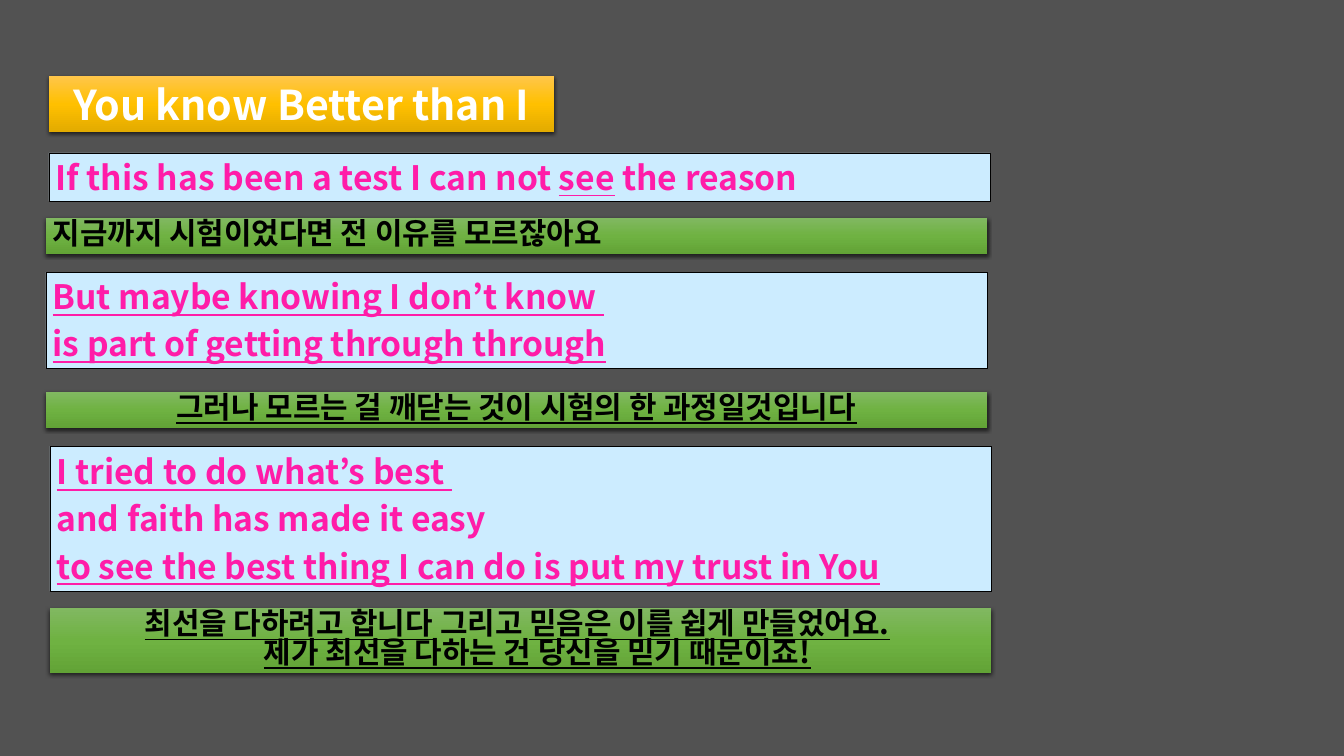
import copy
from dataclasses import dataclass

import pptx
import pptx.dml.color
import pptx.enum.shapes
import pptx.enum.text
import pptx.oxml
import pptx.oxml.ns
import pptx.util

PX = pptx.util.Inches(1) / 67.2
ALIGN = pptx.enum.text.PP_ALIGN
ANCHOR = pptx.enum.text.MSO_ANCHOR
WIDTH = 941  # shared by all lyric and translation bars


@dataclass(frozen=True)
class Theme:
    font: str = "Noto Sans CJK KR"
    background: str = "525252"
    title_text: str = "FFFFFF"
    title_fill: tuple = ("FFC64B", "FFC000", "E3AB00")
    lyric_text: str = "FF1CA8"
    lyric_fill: str = "CCECFF"
    outline: str = "000000"
    translation_text: str = "000000"
    translation_fill: tuple = ("81B861", "6FB242", "62A336")
    title_size: int = 44
    lyric_size: int = 36
    translation_size: int = 32


THEME = Theme()

# Each lyric paragraph is a list of (text, underlined) runs
LYRICS = [
    ((49, 153, 48), [
        [("If this has been a test I can not ", False), ("see", True),
         (" the reason", False)],
    ]),
    ((46, 272, 96), [
        [("But maybe knowing I don’t know ", True)],
        [("is part of getting through through", True)],
    ]),
    ((50, 446, 145), [
        [("I tried to do what’s best ", True)],
        [("and faith has made it easy", False)],
        [("to see the best thing I can do is put my trust in You", True)],
    ]),
]

TRANSLATIONS = [
    ((46, 218, 36), ALIGN.LEFT,
     [("지금까지 시험이었다면 전 이유를 모르잖아요", False)]),
    ((46, 392, 36), ALIGN.CENTER,
     [("그러나 모르는 걸 깨닫는 것이 시험의 한 과정일것입니다", True)]),
    ((50, 608, 65), ALIGN.CENTER,
     [("최선을 다하려고 합니다", True), (" 그리고 ", False),
      ("믿음은 이를 쉽게 만들었어요.", True), (" ", False), ("\n", False),
      ("제가 최선을 다하는 건 당신을 믿기 때문이죠!", True)]),
]


def px(value):
    return pptx.util.Emu(round(value * PX))


def rgb(value):
    return pptx.dml.color.RGBColor.from_string(value)


def apply(target, formats):
    for name, value in formats.items():
        setattr(target, name, value)


def fill_gradient(shape, colors):
    """Fill from top to bottom with evenly spaced stops."""
    shape.fill.gradient()
    shape.fill.gradient_angle = 270
    stop_list = shape.fill._fill._gradFill.find(pptx.oxml.ns.qn("a:gsLst"))
    stop_list.append(copy.deepcopy(stop_list[-1]))
    for index, (stop, color) in enumerate(zip(shape.fill.gradient_stops, colors)):
        stop.color.rgb = rgb(color)
        stop.position = index / (len(colors) - 1)


def add_shadow(shape):
    shape.shadow.inherit = False
    effects = shape._element.spPr.find(pptx.oxml.ns.qn("a:effectLst"))
    effects.append(pptx.oxml.parse_xml(
        f'<a:outerShdw {pptx.oxml.ns.nsdecls("a")} blurRad="57150" dist="19050" '
        'dir="5400000" algn="ctr" rotWithShape="0">'
        '<a:srgbClr val="000000"><a:alpha val="63000"/></a:srgbClr></a:outerShdw>'))


def style_gradient_bar(shape, colors):
    fill_gradient(shape, colors)
    shape.line.fill.background()
    add_shadow(shape)


def format_frame(frame, anchor):
    apply(frame, {
        "word_wrap": True,
        "vertical_anchor": anchor,
        "auto_size": pptx.enum.text.MSO_AUTO_SIZE.SHAPE_TO_FIT_TEXT,
    })


def write_runs(paragraph, runs, size, color):
    for text, underlined in runs:
        if text == "\n":
            paragraph.add_line_break()
            continue
        run = paragraph.add_run()
        run.text = text
        apply(run.font, {"name": THEME.font, "size": pptx.util.Pt(size),
                         "bold": True, "underline": underlined})
        run.font.color.rgb = rgb(color)
        # Korean text takes the East Asian typeface
        latin = run.font._element.find(pptx.oxml.ns.qn("a:latin"))
        latin.addnext(pptx.oxml.parse_xml(
            f'<a:ea {pptx.oxml.ns.nsdecls("a")} typeface="{THEME.font}"/>'))


def add_bar(slide, place):
    left, top, height = place
    bar = slide.shapes.add_shape(pptx.enum.shapes.MSO_SHAPE.RECTANGLE,
                                 px(left), px(top), px(WIDTH), px(height))
    bar.shadow.inherit = False
    format_frame(bar.text_frame, ANCHOR.MIDDLE)
    return bar


def add_lyric(slide, place, lines):
    bar = add_bar(slide, place)
    bar.fill.solid()
    bar.fill.fore_color.rgb = rgb(THEME.lyric_fill)
    bar.line.color.rgb = rgb(THEME.outline)
    bar.line.width = pptx.util.Pt(0.75)
    frame = bar.text_frame
    for index, runs in enumerate(lines):
        paragraph = frame.add_paragraph() if index else frame.paragraphs[0]
        apply(paragraph, {"alignment": ALIGN.LEFT,
                          "space_before": pptx.util.Pt(0.2 * THEME.lyric_size)})
        write_runs(paragraph, runs, THEME.lyric_size, THEME.lyric_text)


def add_translation(slide, place, alignment, runs):
    bar = add_bar(slide, place)
    style_gradient_bar(bar, THEME.translation_fill)
    paragraph = bar.text_frame.paragraphs[0]
    apply(paragraph, {"alignment": alignment, "line_spacing": 0.8,
                      "space_before": pptx.util.Pt(0.5 * THEME.translation_size)})
    # Hanging indent
    indent = pptx.util.Inches(0.5)
    properties = paragraph._p.get_or_add_pPr()
    properties.set("marL", str(indent))
    properties.set("indent", str(-indent))
    write_runs(paragraph, runs, THEME.translation_size, THEME.translation_text)


def add_title(slide, text):
    title = slide.shapes.title
    apply(title, {"left": px(49), "top": px(76), "width": px(505), "height": px(56)})
    style_gradient_bar(title, THEME.title_fill)
    format_frame(title.text_frame, ANCHOR.TOP)
    paragraph = title.text_frame.paragraphs[0]
    apply(paragraph, {"alignment": ALIGN.CENTER, "line_spacing": 1.0})
    write_runs(paragraph, [(text, False)], THEME.title_size, THEME.title_text)


def main():
    deck = pptx.Presentation()
    apply(deck, {"slide_width": px(1344), "slide_height": px(756)})
    slide = deck.slides.add_slide(deck.slide_layouts.get_by_name("Title Only"))

    # Background
    slide.background.fill.solid()
    slide.background.fill.fore_color.rgb = rgb(THEME.background)

    # Song title, then each lyric with its translation
    add_title(slide, "You know Better than I")
    for lyric, translation in zip(LYRICS, TRANSLATIONS):
        add_lyric(slide, *lyric)
        add_translation(slide, *translation)

    deck.save("out.pptx")


if __name__ == "__main__":
    main()
